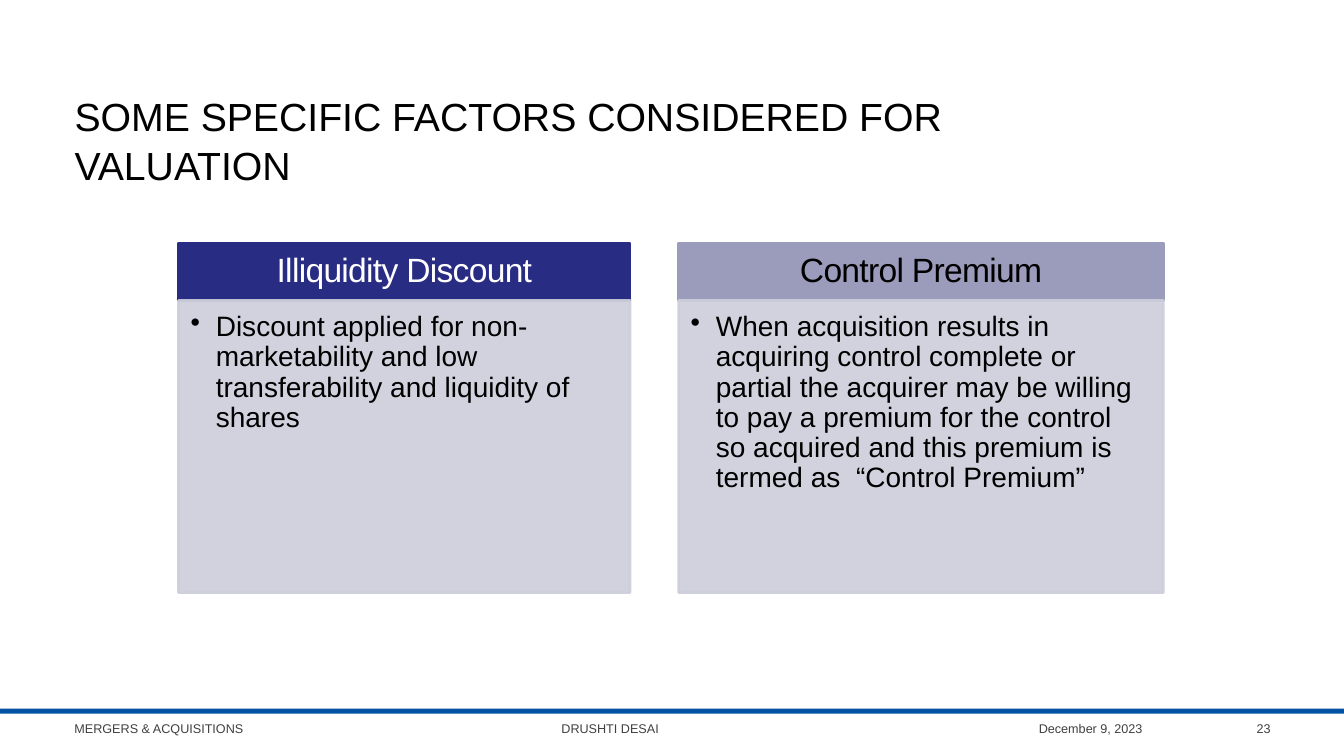
from dataclasses import dataclass

from lxml import etree
from pptx import Presentation
from pptx.dml.color import RGBColor
from pptx.enum.shapes import MSO_SHAPE
from pptx.enum.text import MSO_ANCHOR, MSO_AUTO_SIZE, PP_ALIGN
from pptx.oxml.ns import qn
from pptx.util import Inches, Pt

RECT = MSO_SHAPE.RECTANGLE
TOP, MIDDLE = MSO_ANCHOR.TOP, MSO_ANCHOR.MIDDLE
LEFT, CENTER, RIGHT = PP_ALIGN.LEFT, PP_ALIGN.CENTER, PP_ALIGN.RIGHT
NO_AUTOFIT = MSO_AUTO_SIZE.NONE


@dataclass(frozen=True)
class Theme:
    font: str = "Arial"
    black: str = "000000"
    white: str = "FFFFFF"
    navy: str = "292C83"
    lavender: str = "9B9BBB"
    panel: str = "CDCEDB"
    bar: str = "0152A2"
    footer: str = "404040"
    title_size: int = 28
    heading_size: int = 24
    body_size: int = 20
    footer_size: int = 9


THEME = Theme()
INSETS = (0.1, 0.05, 0.1, 0.05)
HEADING_INSETS = (0.19, 0.11, 0.19, 0.11)
BODY_INSETS = (0.12, 0.12, 0.16, 0.17)
FOOTER_TOP, FOOTER_HEIGHT = 7.03, 0.4
HEADING_TOP, HEADING_HEIGHT, BODY_HEIGHT = 2.41, 0.57, 2.9

# left, width, heading, heading fill, heading colour, body
CARDS = [
    (1.77, 4.48, "Illiquidity Discount", THEME.navy, THEME.white,
     "Discount applied for non-marketability and low transferability and "
     "liquidity of shares"),
    (6.73, 4.81, "Control Premium", THEME.lavender, THEME.black,
     "When acquisition results in acquiring control complete or partial the "
     "acquirer may be willing to pay a premium for the control so acquired "
     "and this premium is termed as  “Control Premium”"),
]


def write(shape, text, size, color=THEME.black, align=LEFT, anchor=MIDDLE,
          insets=INSETS, line_spacing=1.0, tracking=None, bullet=False,
          tab=None):
    tf = shape.text_frame
    tf.word_wrap = True
    tf.auto_size = NO_AUTOFIT
    tf.vertical_anchor = anchor
    (tf.margin_left, tf.margin_top,
     tf.margin_right, tf.margin_bottom) = map(Inches, insets)
    p = tf.paragraphs[0]
    p.alignment = align
    p.line_spacing = line_spacing
    pPr = p._p.get_or_add_pPr()
    if bullet:
        indent = Inches(0.25)
        pPr.set("marL", str(indent))
        pPr.set("indent", str(-indent))
        etree.SubElement(pPr, qn("a:buChar"), char="•")
    if tab is not None:
        tabs = etree.SubElement(pPr, qn("a:tabLst"))
        etree.SubElement(tabs, qn("a:tab"), pos=str(Inches(tab)), algn="l")
    r = p.add_run()
    r.text = text
    r.font.name = THEME.font
    r.font.size = Pt(size)
    r.font.color.rgb = RGBColor.from_string(color)
    if tracking is not None:
        r.font._element.set("spc", str(round(tracking * 100)))


def add_box(s, left, top, width, height, fill, line_width=None, opacity=None):
    box = s.shapes.add_shape(RECT, Inches(left), Inches(top),
                             Inches(width), Inches(height))
    box.shadow.inherit = False
    box.fill.solid()
    box.fill.fore_color.rgb = RGBColor.from_string(fill)
    if line_width is None:
        box.line.fill.background()
    else:
        box.line.width = Pt(line_width)
        box.line.color.rgb = RGBColor.from_string(fill)
    if opacity is not None:
        for color in box._element.spPr.iter(qn("a:srgbClr")):
            etree.SubElement(color, qn("a:alpha"), val=str(opacity * 1000))
    return box


def add_title(s, text):
    title = s.shapes.title
    title.left, title.top = Inches(0.64), Inches(0.62)
    title.width, title.height = Inches(10.79), Inches(1.53)
    write(title, text, THEME.title_size, line_spacing=1.04)


def add_card(s, left, width, heading, fill, color, body):
    head = add_box(s, left, HEADING_TOP, width, HEADING_HEIGHT, fill, 1.75)
    write(head, heading, THEME.heading_size, color, CENTER,
          insets=HEADING_INSETS, line_spacing=0.9, tracking=-0.5)
    panel = add_box(s, left, HEADING_TOP + HEADING_HEIGHT, width, BODY_HEIGHT,
                    THEME.panel, 1.75, opacity=90)
    write(panel, body, THEME.body_size, anchor=TOP, insets=BODY_INSETS,
          line_spacing=0.9, bullet=True)


def add_footer(s, text, left, width, **fmt):
    box = s.shapes.add_textbox(Inches(left), Inches(FOOTER_TOP),
                               Inches(width), Inches(FOOTER_HEIGHT))
    write(box, text, THEME.footer_size, THEME.footer, **fmt)


def main():
    prs = Presentation()
    prs.slide_width, prs.slide_height = Inches(13.33), Inches(7.5)
    s = prs.slides.add_slide(prs.slide_layouts.get_by_name("Title Only"))
    add_box(s, 0, FOOTER_TOP, 13.33, 0.05, THEME.bar)
    add_title(s, "SOME SPECIFIC FACTORS CONSIDERED FOR VALUATION")
    for card in CARDS:
        add_card(s, *card)
    add_footer(s, "MERGERS & ACQUISITIONS\tDRUSHTI DESAI", 0.64, 7.56, tab=4.83)
    add_footer(s, "December 9, 2023", 8.32, 3.11, align=RIGHT)
    add_footer(s, "23", 11.55, 1.15, align=RIGHT)
    prs.save("out.pptx")


if __name__ == "__main__":
    main()
